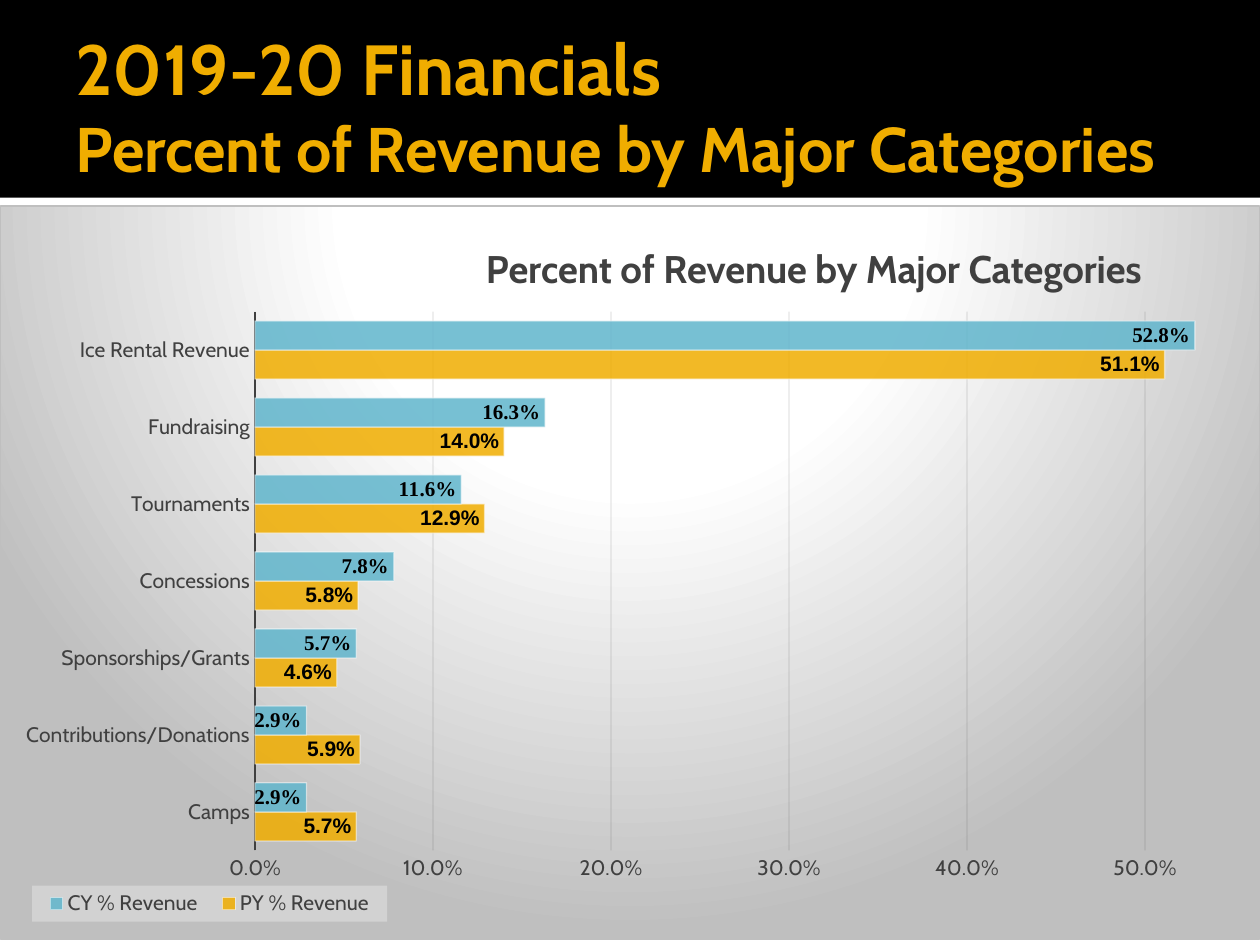
from lxml import etree
from pptx import Presentation
from pptx.chart.data import CategoryChartData
from pptx.dml.color import RGBColor
from pptx.enum.chart import XL_CHART_TYPE, XL_LABEL_POSITION, XL_LEGEND_POSITION, XL_TICK_MARK
from pptx.enum.shapes import MSO_SHAPE
from pptx.enum.text import MSO_ANCHOR
from pptx.oxml import parse_xml
from pptx.oxml.ns import nsdecls, qn
from pptx.util import Inches, Pt

BAR = XL_CHART_TYPE.BAR_CLUSTERED
INSIDE_END = XL_LABEL_POSITION.INSIDE_END
BOTTOM = XL_LEGEND_POSITION.BOTTOM
NO_TICK = XL_TICK_MARK.NONE
RECT = MSO_SHAPE.RECTANGLE
MIDDLE = MSO_ANCHOR.MIDDLE

FONT = "Cabin"
PERCENT = "0.0%"
HEADING = "Percent of Revenue by Major Categories"
COLORS = {"black": "000000", "white": "FFFFFF", "gold": "F0AD00", "blue": "60B5CC",
          "text": "404040", "grid": "0D0D0D", "edge": "BFBFBF", "legend": "F2F2F2"}

CATEGORIES = ["Camps", "Contributions/Donations", "Sponsorships/Grants", "Concessions",
              "Tournaments", "Fundraising", "Ice Rental Revenue"]
SERIES = [
    ("PY % Revenue", [0.057, 0.059, 0.046, 0.058, 0.129, 0.14, 0.511], "gold", "Arial"),
    ("CY % Revenue", [0.029, 0.029, 0.057, 0.078, 0.116, 0.163, 0.528], "blue", "Times New Roman"),
]


def rgb(name):
    return RGBColor.from_string(COLORS[name])


def style_font(font, size, color="text", bold=False, name=FONT):
    font.size, font.bold, font.name = Pt(size), bold, name
    font.color.rgb = rgb(color)


def add_text(p, text, **style):
    r = p.add_run()
    r.text = text
    style_font(r.font, **style)


def add_band(s, top, height, color):
    sp = s.shapes.add_shape(RECT, 0, Inches(top), Inches(10), Inches(height))
    sp.shadow.inherit = False
    sp.fill.solid()
    sp.fill.fore_color.rgb = rgb(color)
    sp.line.fill.background()


def add_title(s):
    sp = s.shapes.add_textbox(Inches(0.5), Inches(0.17), Inches(9.42), Inches(1.33))
    tf = sp.text_frame
    tf.word_wrap = True
    tf.vertical_anchor = MIDDLE
    tf.margin_left = Inches(0.1)
    tf.margin_top = tf.margin_right = tf.margin_bottom = Inches(0.05)
    p = tf.paragraphs[0]
    add_text(p, "2019-20 Financials", size=40.5, color="gold", bold=True)
    p.add_line_break()
    add_text(p, HEADING, size=36, color="gold", bold=True)


def paint(fill, color, alpha=100):
    fill.solid()
    fill.fore_color.rgb = rgb(color)
    clr = fill._xPr.find(qn("a:solidFill")).find(qn("a:srgbClr"))
    etree.SubElement(clr, qn("a:alpha"), val=str(alpha * 1000))


def draw_line(line, color, width, alpha=100):
    line.width = Pt(width)
    paint(line.fill, color, alpha)


def layout_xml(x, y, w=None, h=None, inner=False):
    target = '<c:layoutTarget val="inner"/>' if inner else ""
    size = f'<c:w val="{w}"/><c:h val="{h}"/>' if w else ""
    return parse_xml(
        f'<c:layout {nsdecls("c")}><c:manualLayout>{target}<c:xMode val="edge"/>'
        f'<c:yMode val="edge"/><c:x val="{x}"/><c:y val="{y}"/>{size}'
        '</c:manualLayout></c:layout>')


def set_layout(element, before, *box, **options):
    for old in element.findall(qn("c:layout")):
        element.remove(old)
    layout = layout_xml(*box, **options)
    if before is None:
        element.insert(0, layout)
    else:
        element.find(qn(before)).addnext(layout)


def fill_chart_area(chart):
    stops = "".join(f'<a:gs pos="{pos * 1000}"><a:srgbClr val="{COLORS[c]}"/></a:gs>'
                    for pos, c in [(0, "white"), (39, "white"), (100, "edge")])
    area = parse_xml(
        f'<c:spPr {nsdecls("c", "a")}><a:gradFill><a:gsLst>{stops}</a:gsLst>'
        '<a:path path="circle"><a:fillToRect l="50000" t="-80000" r="50000" b="180000"/></a:path>'
        f'</a:gradFill><a:ln w="{Pt(0.75)}"><a:solidFill><a:srgbClr val="{COLORS["edge"]}"/>'
        '</a:solidFill></a:ln></c:spPr>')
    chart._chartSpace.find(qn("c:chart")).addnext(area)


def style_axes(chart):
    for axis in (chart.category_axis, chart.value_axis):
        axis.major_tick_mark = axis.minor_tick_mark = NO_TICK
        style_font(axis.tick_labels.font, 12)
    chart.category_axis.has_major_gridlines = False
    draw_line(chart.category_axis.format.line, "text", 1.5)
    values = chart.value_axis
    values.minimum_scale, values.maximum_scale, values.major_unit = 0, 0.55, 0.1
    values.tick_labels.number_format = PERCENT
    values.tick_labels.number_format_is_linked = False
    values.format.line.fill.background()
    values.has_major_gridlines = True
    draw_line(values.major_gridlines.format.line, "grid", 0.75, 10)


def style_series(series, color, label_font):
    paint(series.format.fill, color, 85)
    draw_line(series.format.line, "white", 0.75, 50)
    series.invert_if_negative = False
    labels = series.data_labels
    labels.show_value = True
    labels.position = INSIDE_END
    labels.number_format = PERCENT
    labels.number_format_is_linked = False
    style_font(labels.font, 12, "black", True, label_font)


def add_legend(chart):
    chart.has_legend = True
    legend = chart.legend
    legend.position = BOTTOM
    legend.include_in_layout = False
    style_font(legend.font, 12)
    set_layout(legend._element, "c:legendPos", 0.025, 0.927, 0.282, 0.049)
    area = parse_xml(
        f'<c:spPr {nsdecls("c", "a")}><a:solidFill><a:srgbClr val="{COLORS["legend"]}">'
        '<a:alpha val="39000"/></a:srgbClr></a:solidFill></c:spPr>')
    legend._element.find(qn("c:txPr")).addprevious(area)


def add_revenue_chart(s):
    data = CategoryChartData(number_format=PERCENT)
    data.categories = CATEGORIES
    for name, values, _, _ in SERIES:
        data.add_series(name, values)
    chart = s.shapes.add_chart(BAR, 0, Inches(1.63), Inches(10), Inches(5.83), data).chart
    style_font(chart.font, 10, "black")
    fill_chart_area(chart)
    chart.has_title = True
    add_text(chart.chart_title.text_frame.paragraphs[0], HEADING, size=22, bold=True)
    set_layout(chart.chart_title._element, "c:tx", 0.38, 0.04)
    set_layout(chart._chartSpace.chart.plotArea, None, 0.202, 0.144, 0.778, 0.735, inner=True)
    style_axes(chart)
    plot = chart.plots[0]
    plot.gap_width, plot.overlap, plot.vary_by_categories = 65, 0, False
    for series, (_, _, color, label_font) in zip(plot.series, SERIES):
        style_series(series, color, label_font)
    add_legend(chart)


def main():
    prs = Presentation()
    prs.slide_width, prs.slide_height = Inches(10), Inches(7.5)
    s = prs.slides.add_slide(prs.slide_layouts[6])
    add_band(s, 1.57, 0.05, "white")
    add_band(s, 0, 1.57, "black")
    add_title(s)
    add_revenue_chart(s)
    prs.save("out.pptx")


if __name__ == "__main__":
    main()
